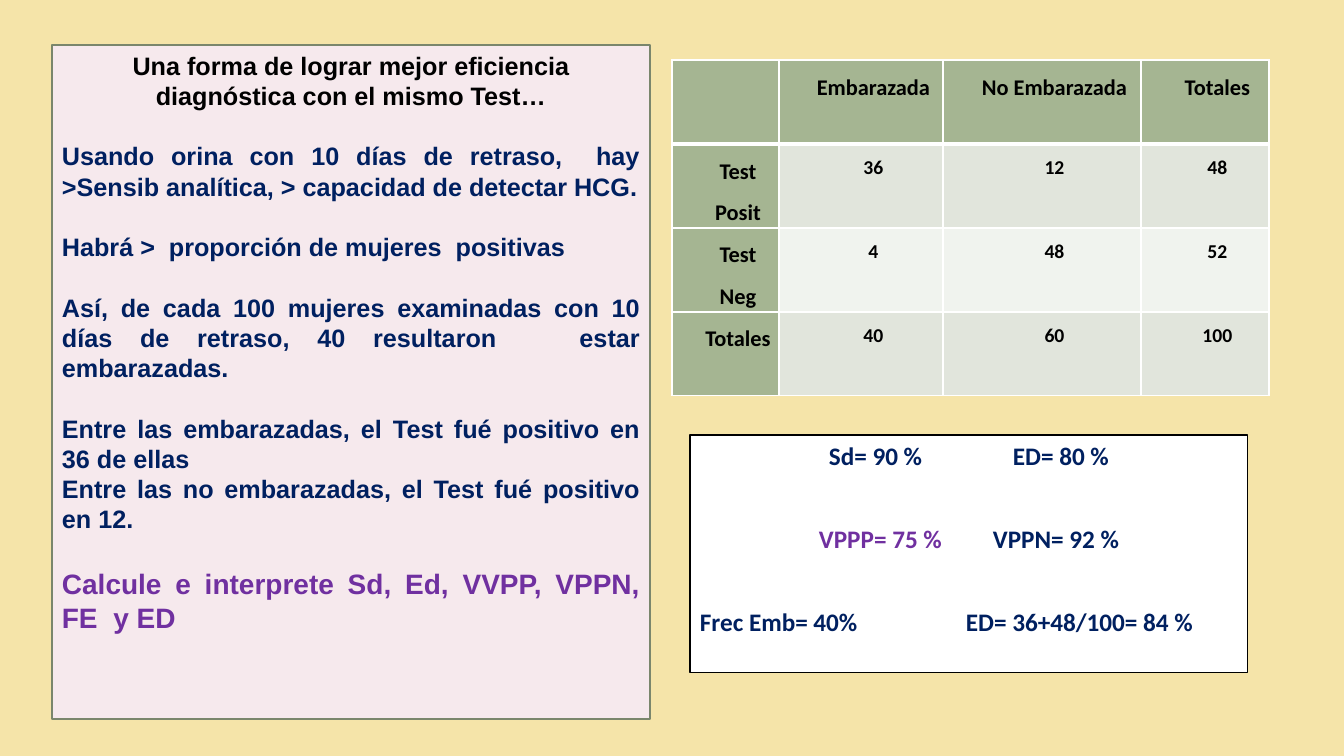
from lxml.etree import SubElement
from pptx import Presentation
from pptx.dml.color import RGBColor
from pptx.enum.shapes import MSO_SHAPE
from pptx.enum.text import MSO_ANCHOR, PP_ALIGN
from pptx.oxml.ns import qn
from pptx.util import Emu, Pt

PX = 12192000 / 1344
COLORS = {
    "background": "F5E4A9",
    "panel": "F6E9ED",
    "panel_line": "7A866C",
    "header": "A5B592",
    "band_dark": "E1E5DC",
    "band_light": "F0F3EE",
    "white": "FFFFFF",
    "black": "000000",
    "navy": "002060",
    "purple": "7030A0",
}
TEST_RESULTS = [
    ["", "Embarazada", "No Embarazada", "Totales"],
    ["Test Posit", "36", "12", "48"],
    ["Test Neg", "4", "48", "52"],
    ["Totales", "40", "60", "100"],
]
COLUMN_WIDTHS = [107, 164, 198, 128]
ROW_HEIGHT = 84
# Text and space before it in points
EXPLANATION = [
    ("Usando orina con 10 días de retraso,  hay >Sensib analítica, "
     "> capacidad de detectar HCG.", 21.6),
    ("Habrá >  proporción de mujeres  positivas", 21.6),
    ("Así, de cada 100 mujeres examinadas con 10 días de retraso, "
     "40 resultaron   estar embarazadas.", 21.6),
    ("Entre las embarazadas, el Test fué positivo en 36 de ellas", 21.6),
    ("Entre las no embarazadas, el Test fué positivo en 12.", 0),
]
# Runs with their colours, and left tab stops in px
INDICATORS = [
    ([("\tSd= 90 %\tED= 80 %", "navy")], [129, 313]),
    ([("\tVPPP= 75 %", "purple"), ("\tVPPN= 92 %", "navy")], [119, 293]),
    ([("Frec Emb= 40%\tED= 36+48/100= 84 %", "navy")], [266]),
]


def px(length):
    return Emu(round(length * PX))


def rgb(name):
    return RGBColor.from_string(COLORS[name])


def add_text(paragraph, text, *, size=18, font="Arial", color="navy",
             align=PP_ALIGN.JUSTIFY, before=0, after=0, spacing=None):
    """Add one bold run and set the format of its paragraph."""
    paragraph.alignment = align
    paragraph.space_before = Pt(before)
    paragraph.space_after = Pt(after)
    paragraph.line_spacing = spacing
    run = paragraph.add_run()
    run.text = text
    run.font.size = Pt(size)
    run.font.name = font
    run.font.bold = True
    run.font.color.rgb = rgb(color)


def add_tab_stops(paragraph, stops):
    tab_list = SubElement(paragraph._p.get_or_add_pPr(), qn("a:tabLst"))
    for stop in stops:
        SubElement(tab_list, qn("a:tab"), pos=str(px(stop)), algn="l")


def add_box(slide, left, top, width, height, fill, line, line_width):
    """Add a bordered rectangle and return its text frame."""
    box = slide.shapes.add_shape(
        MSO_SHAPE.RECTANGLE, px(left), px(top), px(width), px(height))
    box.shadow.inherit = False
    box.fill.solid()
    box.fill.fore_color.rgb = rgb(fill)
    box.line.color.rgb = rgb(line)
    box.line.width = Pt(line_width)
    frame = box.text_frame
    frame.word_wrap = True
    frame.vertical_anchor = MSO_ANCHOR.TOP
    return frame


def add_borders(cell, row):
    """Draw white cell edges, heavier between the header and the body."""
    widths = {"L": 1, "R": 1, "T": 3 if row == 1 else 1, "B": 3 if row == 0 else 1}
    for side, width in widths.items():
        edge = SubElement(cell._tc.get_or_add_tcPr(), qn(f"a:ln{side}"),
                          w=str(Pt(width)))
        edge_fill = SubElement(edge, qn("a:solidFill"))
        SubElement(edge_fill, qn("a:srgbClr"), val=COLORS["white"])


def add_results_table(slide):
    table = slide.shapes.add_table(
        len(TEST_RESULTS), len(COLUMN_WIDTHS), px(672), px(60),
        px(sum(COLUMN_WIDTHS)), px(ROW_HEIGHT * len(TEST_RESULTS))).table
    for column, width in zip(table.columns, COLUMN_WIDTHS):
        column.width = px(width)
    for r, values in enumerate(TEST_RESULTS):
        table.rows[r].height = px(ROW_HEIGHT)
        for c, value in enumerate(values):
            cell = table.cell(r, c)
            is_label = r == 0 or c == 0
            band = "band_dark" if r % 2 else "band_light"
            cell.margin_left = cell.margin_right = px(7)
            cell.margin_top = cell.margin_bottom = 0
            add_borders(cell, r)
            cell.fill.solid()
            cell.fill.fore_color.rgb = rgb("header" if is_label else band)
            if value:
                paragraph = cell.text_frame.paragraphs[0]
                add_text(paragraph, value, size=16 if is_label else 14,
                         font="Calibri", color="black",
                         align=PP_ALIGN.CENTER, spacing=1.5)
                paragraph._p.get_or_add_pPr().set("marL", str(px(25)))


def add_indicators(slide):
    frame = add_box(slide, 690, 435, 558, 238, "white", "black", 0.75)
    for i, (runs, stops) in enumerate(INDICATORS):
        paragraph = frame.add_paragraph() if i else frame.paragraphs[0]
        for text, color in runs:
            add_text(paragraph, text, font="Calibri", color=color,
                     align=PP_ALIGN.LEFT, before=30 if i else 0, after=8)
        add_tab_stops(paragraph, stops)


def add_explanation(slide):
    frame = add_box(slide, 52, 45, 598, 674, "panel", "panel_line", 1)
    add_text(frame.paragraphs[0],
             "Una forma de lograr mejor eficiencia diagnóstica con el mismo Test…",
             color="black", align=PP_ALIGN.CENTER)
    for text, before in EXPLANATION:
        add_text(frame.add_paragraph(), text, before=before)
    add_text(frame.add_paragraph(),
             "Calcule e interprete Sd, Ed, VVPP, VPPN, FE  y ED",
             size=20, color="purple", before=23.6)


def main():
    presentation = Presentation()
    presentation.slide_width = px(1344)
    presentation.slide_height = px(756)
    slide = presentation.slides.add_slide(presentation.slide_layouts[6])
    slide.background.fill.solid()
    slide.background.fill.fore_color.rgb = rgb("background")
    add_results_table(slide)
    add_indicators(slide)
    add_explanation(slide)
    presentation.save("out.pptx")


if __name__ == "__main__":
    main()
